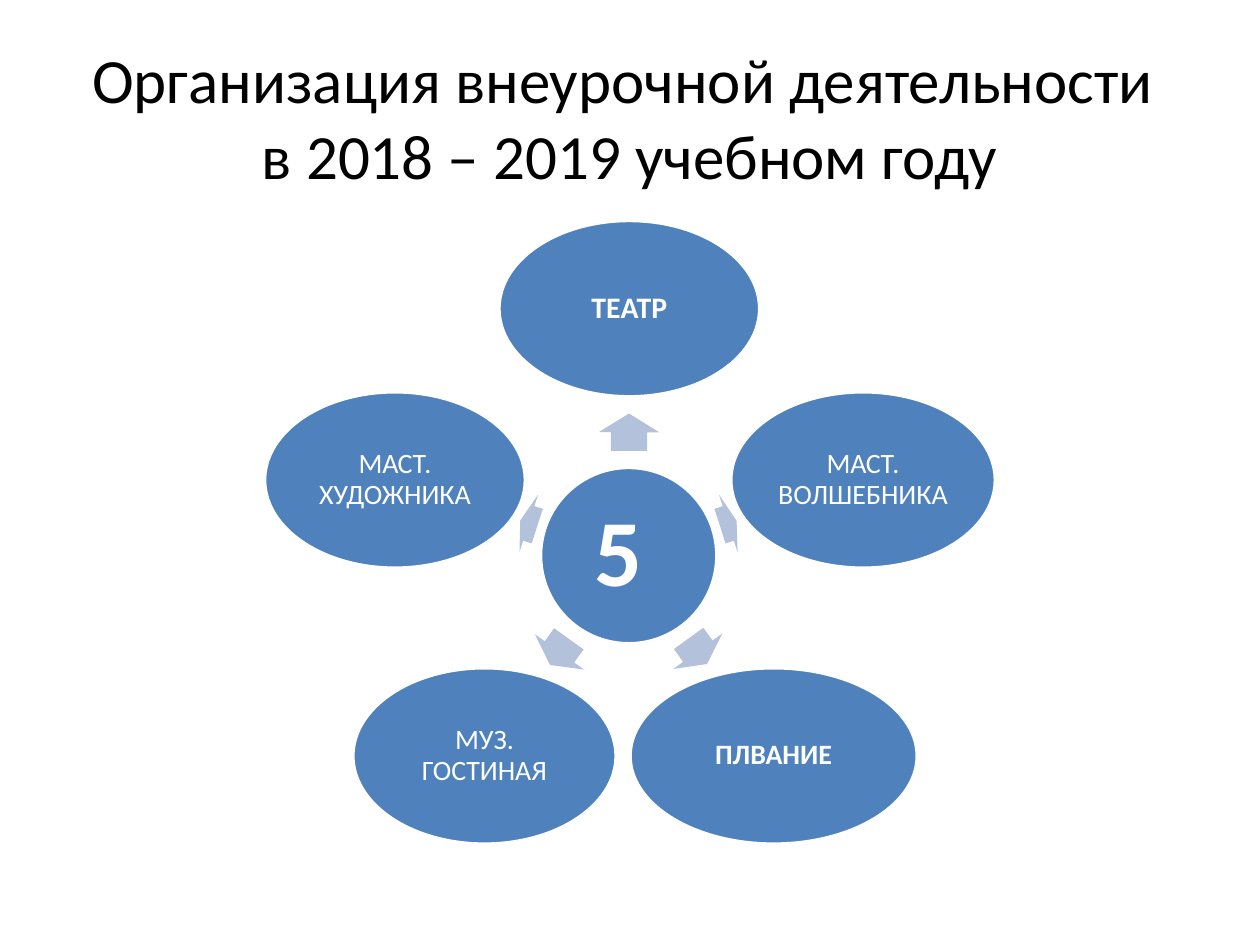
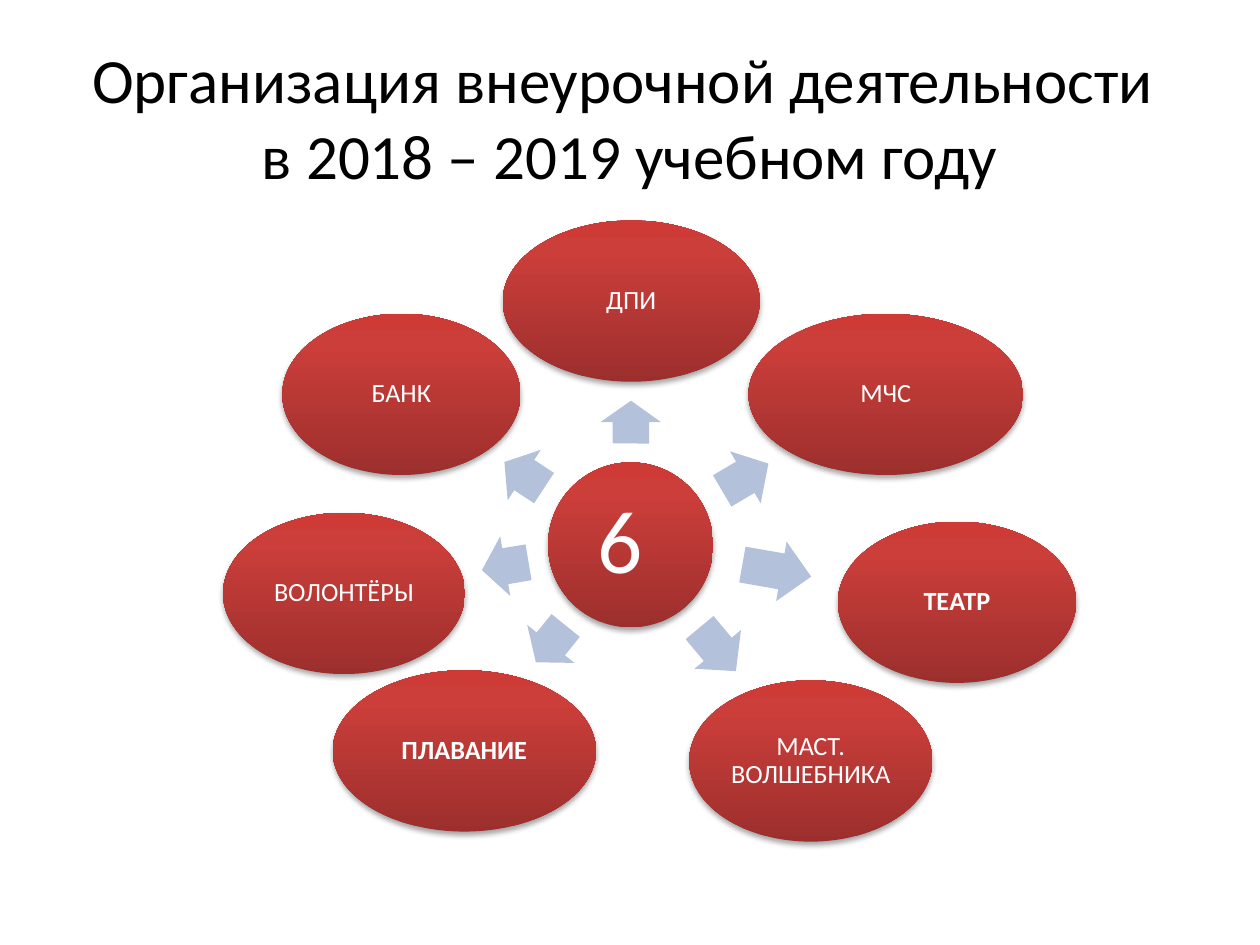
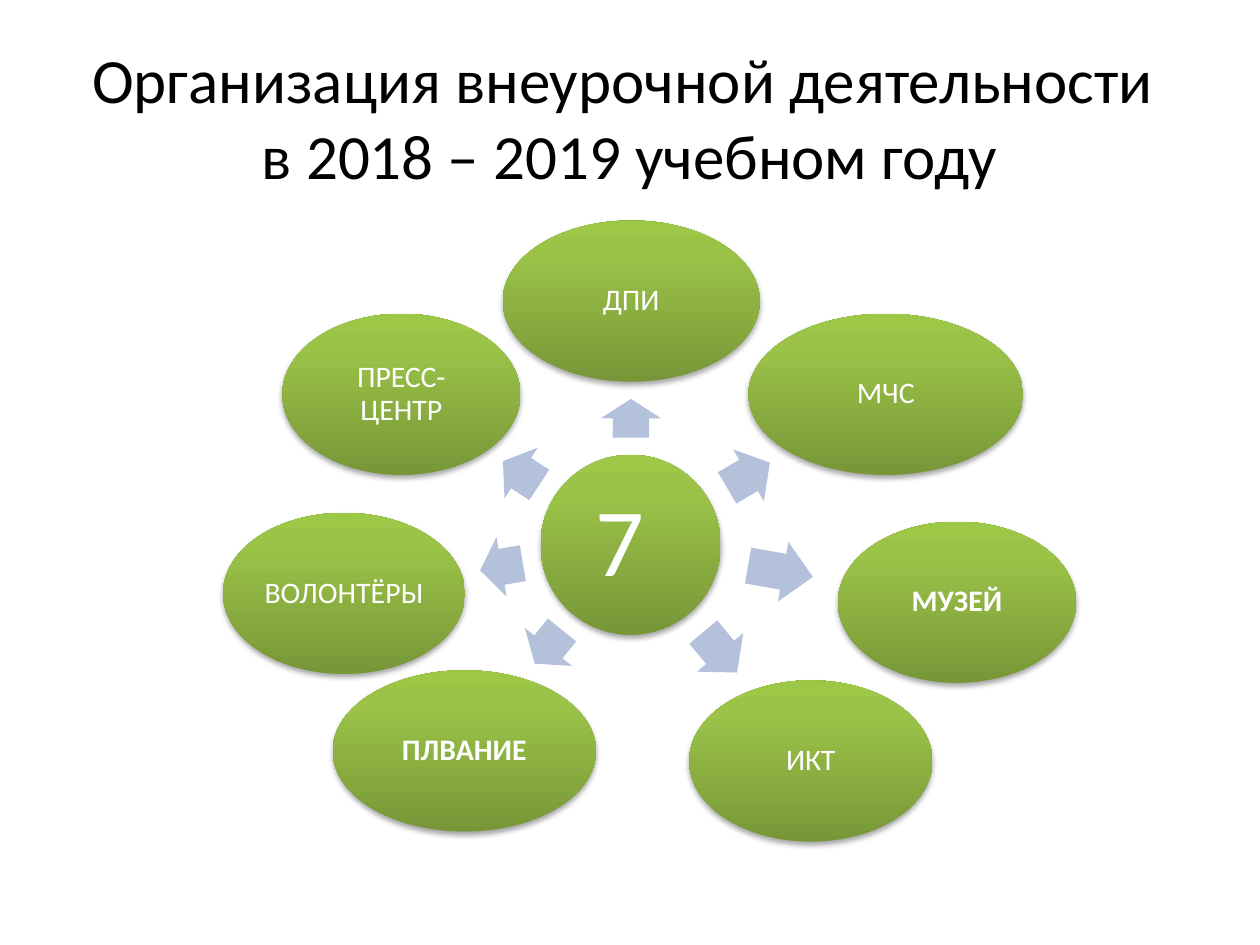
from copy import deepcopy
from dataclasses import dataclass
from math import atan2, cos, degrees, hypot, sin

from pptx import Presentation
from pptx.dml.color import RGBColor as Rgb
from pptx.enum.shapes import MSO_SHAPE as Kind
from pptx.enum.text import MSO_ANCHOR as Anchor, MSO_AUTO_SIZE as Fit, PP_ALIGN as Align
from pptx.oxml import parse_xml
from pptx.oxml.ns import nsdecls, qn
from pptx.util import Pt

PX = 9144  # 100 px to the inch
FONT = "Calibri"
TITLE = "Организация внеурочной деятельности \vв 2018 – 2019 учебном году"
COLORS = {
    "text": "000000", "white": "FFFFFF", "arrow": "B3C1DB", "blue": "4F81BD",
    "red low": "9C2F2D", "red mid": "CB3E3A", "red top": "CE3B37",
    "green low": "779737", "green mid": "9BC348", "green top": "9DC746",
}
STOPS = {"low": 0, "mid": 0.8, "top": 1}
ARROW_H = 48
GAP_PART = 0.53  # share of the gap that an arrow fills


@dataclass(frozen=True)
class Oval:
    left: int
    top: int
    width: int
    height: int

    @property
    def mid(self) -> tuple[float, float]:
        return self.left + self.width / 2, self.top + self.height / 2

    def reach(self, turn: float) -> float:
        """Distance from the centre to the edge in one direction."""
        return 1 / hypot(2 * cos(turn) / self.width, 2 * sin(turn) / self.height)


@dataclass(frozen=True)
class Club:
    name: str
    size: int
    bold: bool = False


@dataclass(frozen=True)
class Wheel:
    grade: Club
    hub: Oval
    inset: int
    hue: str
    clubs: list[Club]
    spots: list[Oval]


FIVE = [Oval(*at, 140) for at in (
    (396, 175, 207), (580, 311, 210), (500, 530, 228), (280, 530, 209), (210, 311, 207))]
SEVEN = [Oval(*at, 128) for at in (
    (399, 175, 204), (594, 249, 218), (665, 414, 189), (547, 540, 193),
    (264, 532, 209), (177, 407, 192), (224, 249, 189))]

WHEELS = [
    Wheel(Club("5 ", 54, True), Oval(429, 371, 140, 140), 7, "blue", [
        Club("ТЕАТР", 17, True), Club("МАСТ. ВОЛШЕБНИКА", 16), Club("ПЛВАНИЕ", 16, True),
        Club("МУЗ. ГОСТИНАЯ", 16), Club("МАСТ. ХУДОЖНИКА", 16)], FIVE),
    Wheel(Club("6 ", 51), Oval(435, 367, 131, 131), 7, "red", [
        Club("ДПИ", 15), Club("МЧС", 15), Club("ТЕАТР", 15, True),
        Club("МАСТ. ВОЛШЕБНИКА", 15), Club("ПЛАВАНИЕ", 15, True),
        Club("ВОЛОНТЁРЫ", 15), Club("БАНК", 15)], SEVEN),
    Wheel(Club("7 ", 55), Oval(429, 361, 143, 143), 8, "green", [
        Club("ДПИ", 17), Club("МЧС", 17), Club("МУЗЕЙ", 17, True), Club("ИКТ", 17),
        Club("ПЛВАНИЕ", 17, True), Club("ВОЛОНТЁРЫ", 17), Club("ПРЕСС-ЦЕНТР", 17)], SEVEN),
]


def rgb(name: str) -> Rgb:
    return Rgb.from_string(COLORS[name])


def place(item, left: float, top: float, width: float, height: float) -> None:
    item.left, item.top, item.width, item.height = (
        round(n * PX) for n in (left, top, width, height))


def write(frame, text: str, size: int, color: str, bold: bool = False) -> None:
    frame.text = text
    frame.word_wrap = True
    frame.auto_size = Fit.NONE
    frame.vertical_anchor = Anchor.MIDDLE
    para = frame.paragraphs[0]
    para.alignment = Align.CENTER
    font = para.font
    font.name, font.size, font.bold = FONT, Pt(size), bold
    font.color.rgb = rgb(color)


def add_shape(slide, kind: Kind, *box: float):
    shape = slide.shapes.add_shape(kind, 0, 0, PX, PX)
    place(shape, *box)
    shape.shadow.inherit = False
    shape.line.fill.background()
    return shape


def shade(shape, hue: str) -> None:
    """Three-stop gradient, dark at the foot, with a soft shadow below."""
    fill = shape.fill
    fill.gradient()
    fill.gradient_angle = 90
    props = shape._element.spPr
    row = props.find(".//" + qn("a:gsLst"))
    row.append(deepcopy(row[-1]))
    for stop, (name, pos) in zip(fill.gradient_stops, STOPS.items()):
        stop.color.rgb = rgb(f"{hue} {name}")
        stop.position = pos
    props.find(qn("a:effectLst")).append(parse_xml(
        f'<a:outerShdw {nsdecls("a")} blurRad="40000" dist="23000" dir="5400000" rotWithShape="0">'
        '<a:srgbClr val="000000"><a:alpha val="35000"/></a:srgbClr></a:outerShdw>'))


def add_oval(slide, oval: Oval, club: Club, hue: str, inset: int = 2) -> None:
    shape = add_shape(slide, Kind.OVAL, oval.left, oval.top, oval.width, oval.height)
    if hue in COLORS:
        shape.fill.solid()
        shape.fill.fore_color.rgb = rgb(hue)
        shape.line.color.rgb = rgb("white")
        shape.line.width = Pt(2)
    else:
        shade(shape, hue)
    frame = shape.text_frame
    write(frame, club.name, club.size, "white", club.bold)
    frame.paragraphs[0].line_spacing = 0.9
    frame.margin_left = frame.margin_right = inset * PX
    frame.margin_top = frame.margin_bottom = inset * PX


def add_arrow(slide, hub: Oval, spot: Oval) -> None:
    """Arrow in the middle of the gap between the hub and a club."""
    (hx, hy), (sx, sy) = hub.mid, spot.mid
    turn = atan2(sy - hy, sx - hx)
    start = hub.reach(turn)
    gap = hypot(sx - hx, sy - hy) - start - spot.reach(turn)
    far, width = start + gap / 2, gap * GAP_PART
    arrow = add_shape(slide, Kind.RIGHT_ARROW, hx + far * cos(turn) - width / 2,
                      hy + far * sin(turn) - ARROW_H / 2, width, ARROW_H)
    arrow.rotation = degrees(turn) % 360
    arrow.adjustments[0], arrow.adjustments[1] = 0.6, 0.5
    arrow.fill.solid()
    arrow.fill.fore_color.rgb = rgb("arrow")


def add_wheel(deck, wheel: Wheel) -> None:
    slide = deck.slides.add_slide(deck.slide_layouts[5])
    title = slide.shapes.title
    place(title, 50, 30, 900, 125)
    write(title.text_frame, TITLE, 36, "text")
    add_oval(slide, wheel.hub, wheel.grade, wheel.hue, wheel.inset)
    for club, spot in zip(wheel.clubs, wheel.spots):
        add_arrow(slide, wheel.hub, spot)
        add_oval(slide, spot, club, wheel.hue)


def main() -> None:
    deck = Presentation()
    deck.slide_width, deck.slide_height = 1000 * PX, 750 * PX
    for wheel in WHEELS:
        add_wheel(deck, wheel)
    deck.save("out.pptx")


if __name__ == "__main__":
    main()
